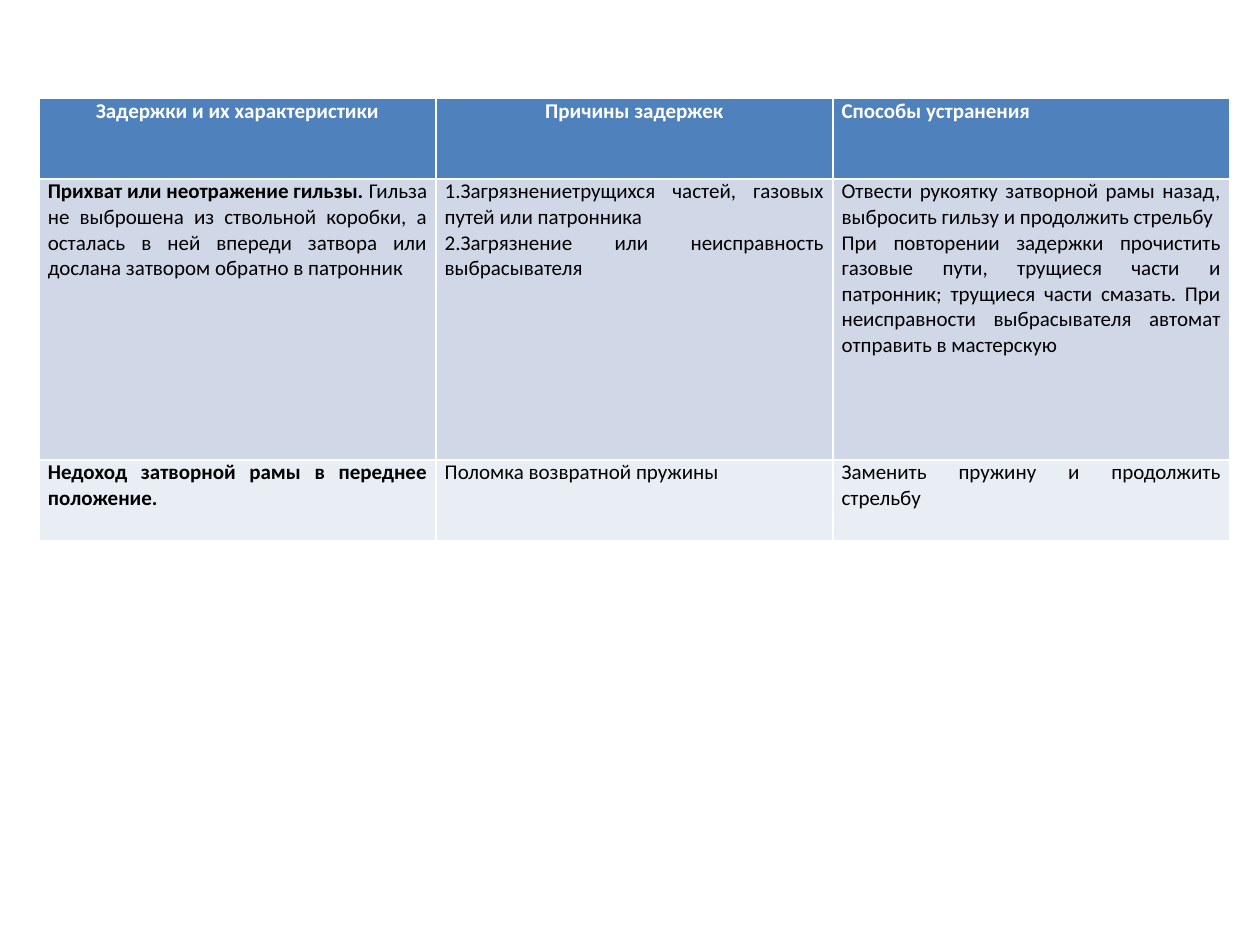
from pptx import Presentation
from pptx.dml.color import RGBColor
from pptx.enum.text import PP_ALIGN as Align
from pptx.util import Inches, Pt

HEADS = [
    ("Задержки и их характеристики", Align.CENTER),
    ("Причины задержек", Align.CENTER),
    ("Способы устранения", Align.JUSTIFY),
]
# Each row: bold fault name, its description, causes, remedies.
FAULTS = [
    ("Прихват или неотражение гильзы.",
     " Гильза не выброшена из ствольной коробки, а осталась в ней впереди "
     "затвора или дослана затвором обратно в патронник",
     ["1.Загрязнениетрущихся частей, газовых путей или патронника",
      "2.Загрязнение или неисправность выбрасывателя"],
     ["Отвести рукоятку затворной рамы назад, выбросить гильзу и продолжить "
      "стрельбу",
      "При повторении задержки прочистить газовые пути, трущиеся части и "
      "патронник; трущиеся части смазать. При неисправности выбрасывателя "
      "автомат отправить в мастерскую"]),
    ("Недоход затворной рамы в переднее положение.", "",
     ["Поломка возвратной пружины"],
     ["Заменить пружину и продолжить стрельбу"]),
]
HEIGHTS = [0.64, 2.23, 0.64]
BANDS = ["D0D8E8", "E9EDF4"]


def color(code):
    return RGBColor.from_string(code)


def fill_cell(cell, paras, back, ink="000000", align=Align.JUSTIFY):
    """Write paras, each a list of (text, bold) runs, into a filled cell."""
    cell.fill.solid()
    cell.fill.fore_color.rgb = color(back)
    cell.margin_left = cell.margin_right = Inches(0.07)
    cell.margin_top = cell.margin_bottom = 0
    frame = cell.text_frame
    for i, runs in enumerate(paras):
        para = frame.paragraphs[0] if i == 0 else frame.add_paragraph()
        para.alignment = align
        for text, bold in runs:
            run = para.add_run()
            run.text = text
            font = run.font
            font.name, font.size, font.bold = "Calibri", Pt(12), bold
            font.color.rgb = color(ink)


def add_faults(slide, left, top, width):
    shape = slide.shapes.add_table(
        len(FAULTS) + 1, len(HEADS), Inches(left), Inches(top),
        Inches(width), Inches(sum(HEIGHTS)))
    table = shape.table
    for row, height in zip(table.rows, HEIGHTS):
        row.height = Inches(height)
    for col, (text, align) in enumerate(HEADS):
        fill_cell(table.cell(0, col), [[(text, True)]], "4F81BD", "FFFFFF", align)
    for row, (name, about, causes, fixes) in enumerate(FAULTS, 1):
        back = BANDS[(row - 1) % len(BANDS)]
        lead = [(name, True)] + ([(about, False)] if about else [])
        plain = [[[(text, False)] for text in part] for part in (causes, fixes)]
        for col, paras in enumerate([[lead], *plain]):
            fill_cell(table.cell(row, col), paras, back)


def main():
    deck = Presentation()
    deck.slide_width, deck.slide_height = Inches(10), Inches(7.5)
    slide = deck.slides.add_slide(deck.slide_layouts[6])
    add_faults(slide, 0.31, 0.78, 9.45)
    deck.save("out.pptx")


if __name__ == "__main__":
    main()
